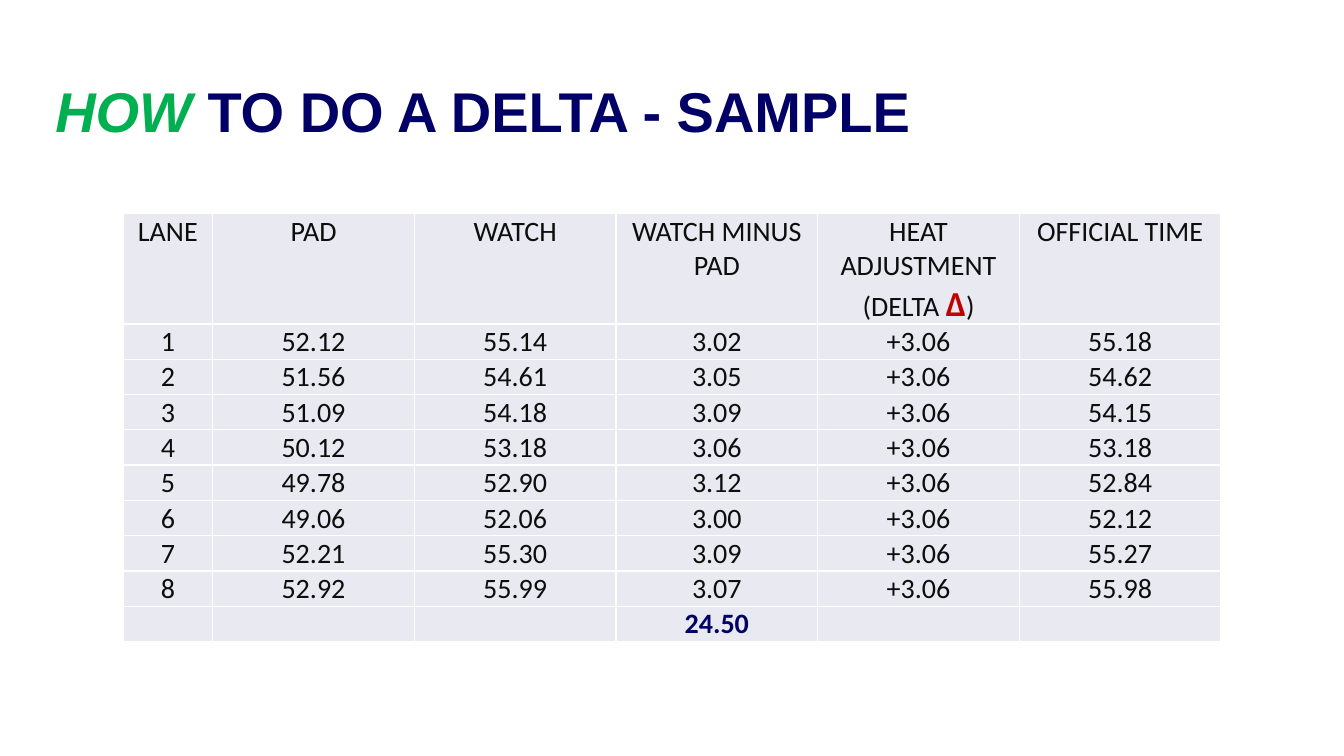
from pptx import Presentation
from pptx.dml.color import RGBColor as RGB
from pptx.enum.text import MSO_ANCHOR as ANCHOR, PP_ALIGN as ALIGN
from pptx.oxml import parse_xml
from pptx.oxml.ns import nsdecls
from pptx.util import Inches, Pt

COLORS = {
    "green": "00B050",
    "navy": "000066",
    "ink": "0D0D0D",
    "red": "C00000",
    "cell": "E9EAF1",
    "border": "FFFFFF",
}
HEADERS = [
    ["LANE"], ["PAD"], ["WATCH"], ["WATCH MINUS PAD"],
    ["HEAT ADJUSTMENT", "(DELTA "], ["OFFICIAL TIME"],
]
ADJUSTMENT = "+3.06"
TIMES = [
    ("52.12", "55.14", "3.02", "55.18"),
    ("51.56", "54.61", "3.05", "54.62"),
    ("51.09", "54.18", "3.09", "54.15"),
    ("50.12", "53.18", "3.06", "53.18"),
    ("49.78", "52.90", "3.12", "52.84"),
    ("49.06", "52.06", "3.00", "52.12"),
    ("52.21", "55.30", "3.09", "55.27"),
    ("52.92", "55.99", "3.07", "55.98"),
]
TOTAL = "24.50"
DELTA_COL, MINUS_COL = 4, 3


def add_run(p, text, font="Calibri", size=20, color="ink", bold=False, italic=False):
    r = p.add_run()
    r.text = text
    r.font.name = font
    r.font.size = Pt(size)
    r.font.bold = bold
    r.font.italic = italic
    r.font.color.rgb = RGB.from_string(COLORS[color])


class SlideBuilder:
    def __init__(self, slide):
        self.slide = slide

    def title(self, left, top, width, height, runs):
        sp = self.slide.shapes.add_textbox(*map(Inches, (left, top, width, height)))
        tf = sp.text_frame
        tf.word_wrap = True
        tf.vertical_anchor = ANCHOR.BOTTOM
        tf.margin_left = tf.margin_right = tf.margin_top = Inches(0.1)
        tf.margin_bottom = Inches(0.05)
        for text, style in runs:
            add_run(tf.paragraphs[0], text, font="Arial", size=40, bold=True, **style)

    def table(self, left, top, widths, heights):
        box = map(Inches, (left, top, sum(widths), sum(heights)))
        table = self.slide.shapes.add_table(len(heights), len(widths), *box).table
        table.first_row = table.horz_banding = False
        for col, width in zip(table.columns, widths):
            col.width = Inches(width)
        for row, height in zip(table.rows, heights):
            row.height = Inches(height)
        for cell in table.iter_cells():
            self.style_cell(cell)
        return table

    def style_cell(self, cell):
        cell.margin_left = cell.margin_right = cell.margin_top = Inches(0.01)
        cell.margin_bottom = 0
        tcPr = cell._tc.get_or_add_tcPr()
        for side in ("lnL", "lnR", "lnT", "lnB"):
            tcPr.append(parse_xml(
                f'<a:{side} {nsdecls("a")} w="{Pt(1)}"><a:solidFill>'
                f'<a:srgbClr val="{COLORS["border"]}"/></a:solidFill></a:{side}>'))
        cell.fill.solid()
        cell.fill.fore_color.rgb = RGB.from_string(COLORS["cell"])

    def cell_text(self, cell, lines, anchor=ANCHOR.MIDDLE, **style):
        cell.vertical_anchor = anchor
        tf = cell.text_frame
        for i, line in enumerate(lines):
            p = tf.add_paragraph() if i else tf.paragraphs[0]
            p.alignment = ALIGN.CENTER
            add_run(p, line, **style)
        return p


def main():
    prs = Presentation()
    prs.slide_width, prs.slide_height = Inches(13.33), Inches(7.5)
    s = SlideBuilder(prs.slides.add_slide(prs.slide_layouts[6]))

    s.title(0.45, 0.65, 12.42, 0.83, [
        ("HOW", {"color": "green", "italic": True}),
        (" TO DO A DELTA - SAMPLE", {"color": "navy"}),
    ])

    table = s.table(1.22, 2.12, [0.89] + [2] * 5, [1.06] + [0.35] * (len(TIMES) + 1))
    for col, lines in enumerate(HEADERS):
        p = s.cell_text(table.cell(0, col), lines, anchor=ANCHOR.TOP)
        if col == DELTA_COL:
            add_run(p, "Δ", size=25, color="red", bold=True)
            add_run(p, ")")
    for lane, (pad, watch, minus, official) in enumerate(TIMES, 1):
        for col, text in enumerate((str(lane), pad, watch, minus, ADJUSTMENT, official)):
            s.cell_text(table.cell(lane, col), [text])
    s.cell_text(table.cell(len(TIMES) + 1, MINUS_COL), [TOTAL], color="navy", bold=True)

    prs.save("out.pptx")


if __name__ == "__main__":
    main()
